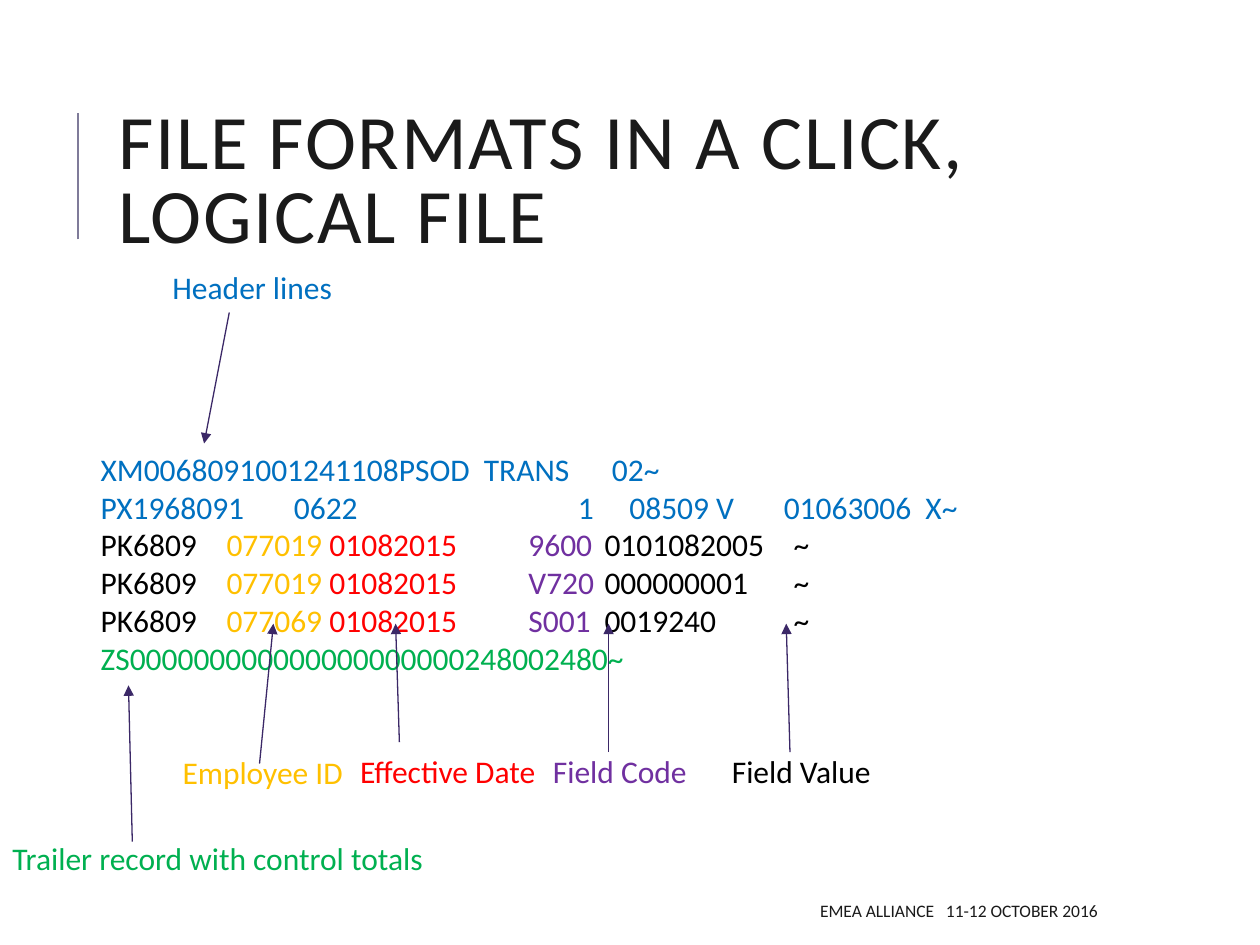
import pptx
import pptx.util
import pptx.dml.color
import pptx.enum.shapes
import pptx.enum.text
import lxml.etree

Inches, Pt = pptx.util.Inches, pptx.util.Pt
ALIGN, ANCHOR = pptx.enum.text.PP_ALIGN, pptx.enum.text.MSO_ANCHOR

FONT = "Calibri"
INK, BLACK, RULE, ARROW = "1A1A1A", "000000", "7F7B99", "3B2867"
BLUE, GOLD, RED, PURPLE, GREEN = "0070C0", "FFC000", "FF0000", "7030A0", "00B050"

TITLE = "FILE FORMATS IN A CLICK, LOGICAL FILE"
FOOTER = "EMEA ALLIANCE   11-12 OCTOBER 2016"

# Fixed-width records: the spaces and tabs are part of the file's layout.
HEADERS = [
    "XM0068091001241108PSOD  TRANS      02~",
    "PX1968091       0622                               1     08509 V       01063006  X~",
]
DETAILS = [  # employee ID, field code, field value with its tabs
    ("077019", "9600", "0101082005\t"),
    ("077019", "V720", "000000001\t"),
    ("077069", "S001", "0019240\t\t"),
]
TRAILER = "ZS000000000000000000000248002480~"

RECORDS_TOP, RECORDS_BOTTOM = 3.52, 5.44
DETAIL_BOTTOM = 4.95
LABEL_ROW = 5.92
LABEL_HEIGHT = 0.4

# text, colour, (left, top, width), arrow start, arrow end
LABELS = [
    ("Header lines", BLUE, (1.27, 2.08, 2.03), (1.82, 2.48), (1.62, RECORDS_TOP)),
    ("Trailer record with control totals", GREEN, (0, 6.61, 3.56),
     (1.05, 6.68), (1.02, RECORDS_BOTTOM)),
    ("Employee ID", GOLD, (1.35, LABEL_ROW + 0.01, 1.71), (2.06, 6.06), (2.17, DETAIL_BOTTOM)),
    ("Effective Date", RED, (2.76, LABEL_ROW, 1.6), (3.17, 5.89), (3.14, DETAIL_BOTTOM)),
    ("Field Code", PURPLE, (4.29, LABEL_ROW, 1.4), (4.83, 5.97), (4.83, DETAIL_BOTTOM)),
    ("Field Value", BLACK, (5.71, LABEL_ROW, 1.58), (6.27, 5.97), (6.24, DETAIL_BOTTOM)),
]


def rgb(value):
    return pptx.dml.color.RGBColor.from_string(value)


def add_text(slide, box, lines, size=18, anchor=ANCHOR.TOP):
    """Add a text box; each line is a list of (text, colour) runs."""
    frame = slide.shapes.add_textbox(*map(Inches, box)).text_frame
    frame.word_wrap = True
    frame.vertical_anchor = anchor
    for index, parts in enumerate(lines):
        paragraph = frame.add_paragraph() if index else frame.paragraphs[0]
        for text, color in parts:
            run = paragraph.add_run()
            run.text = text
            run.font.name, run.font.size = FONT, Pt(size)
            run.font.color.rgb = rgb(color)
    return frame.paragraphs[0]


def add_line(slide, start, end, color, width, arrow=False):
    line = slide.shapes.add_connector(
        pptx.enum.shapes.MSO_CONNECTOR.STRAIGHT, *map(Inches, start + end))
    line.line.color.rgb = rgb(color)
    line.line.width = Pt(width)
    namespace = pptx.oxml.ns.qn
    if arrow:
        lxml.etree.SubElement(line.line._get_or_add_ln(), namespace("a:tailEnd"), type="triangle")
    lxml.etree.SubElement(line._element.spPr, namespace("a:effectLst"))


def record_lines():
    details = [
        [("PK6809\t", BLACK), (employee + " ", GOLD), ("01082015          ", RED),
         (code, PURPLE), (f"\t{value}~", BLACK)]
        for employee, code, value in DETAILS
    ]
    return [[(header, BLUE)] for header in HEADERS] + details + [[(TRAILER, GREEN)]]


def main():
    deck = pptx.Presentation()
    deck.slide_width, deck.slide_height = Inches(10), Inches(7.5)
    slide = deck.slides.add_slide(deck.slide_layouts[6])

    add_line(slide, (0.62, 1.9), (0.62, 0.9), RULE, 1.5)
    title = add_text(slide, (0.84, 0.64, 7.97, 1.64), [[(TITLE, INK)]], 44, ANCHOR.MIDDLE)
    title.line_spacing = 0.8
    title.runs[0].font._element.set("spc", "100")
    footer = add_text(slide, (3.97, 7.08, 4.84, 0.3), [[(FOOTER, INK)]], 10, ANCHOR.MIDDLE)
    footer.alignment = ALIGN.RIGHT

    add_text(slide, (0.7, RECORDS_TOP, 9.3, RECORDS_BOTTOM - RECORDS_TOP), record_lines())
    for text, color, place, start, end in LABELS:
        add_text(slide, place + (LABEL_HEIGHT,), [[(text, color)]])
        add_line(slide, start, end, ARROW, 0.75, arrow=True)

    deck.save("out.pptx")


if __name__ == "__main__":
    main()
